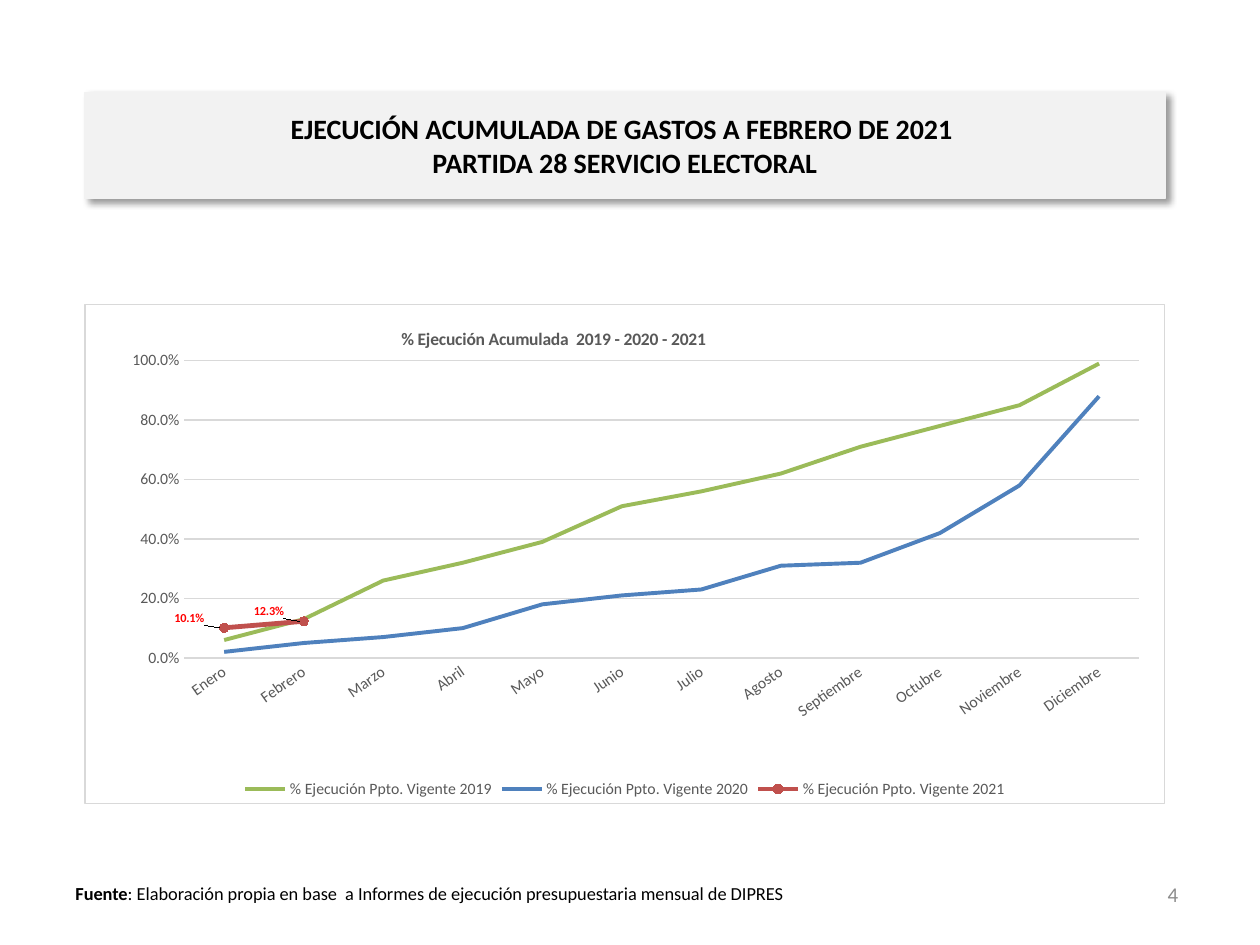
from dataclasses import dataclass
from typing import Optional

from lxml.etree import SubElement
from pptx import Presentation
from pptx.chart.data import CategoryChartData
from pptx.dml.color import RGBColor
from pptx.enum.chart import XL_CHART_TYPE, XL_LABEL_POSITION, XL_LEGEND_POSITION, XL_MARKER_STYLE, XL_TICK_MARK
from pptx.enum.text import MSO_ANCHOR, MSO_AUTO_SIZE, PP_ALIGN
from pptx.oxml import parse_xml
from pptx.oxml.ns import nsdecls, qn
from pptx.util import Pt


@dataclass(frozen=True)
class Theme:
    font: str = "Calibri"
    black: str = "000000"
    gray: str = "595959"
    number: str = "8C8C8C"
    rule: str = "D9D9D9"
    banner: str = "F2F2F2"
    white: str = "FFFFFF"
    alert: str = "FF0000"
    heading_size: float = 16
    number_size: float = 12
    source_size: float = 10.5
    chart_title_size: float = 10
    axis_size: float = 9
    label_size: float = 7


@dataclass(frozen=True)
class Frame:
    left: float
    top: float
    width: float
    height: float

    def lengths(self) -> tuple:
        return Pt(self.left), Pt(self.top), Pt(self.width), Pt(self.height)


@dataclass(frozen=True)
class YearLine:
    year: int
    color: str
    weight: float
    values: tuple
    marked: bool = False


THEME = Theme()
PERCENT = "0.0%"
MONTHS = ("Enero", "Febrero", "Marzo", "Abril", "Mayo", "Junio", "Julio", "Agosto",
          "Septiembre", "Octubre", "Noviembre", "Diciembre")
YEAR_LINES = (
    YearLine(2019, "9BBB59", 2.25, (0.06, 0.13, 0.26, 0.32, 0.39, 0.51, 0.56, 0.62, 0.71, 0.78, 0.85, 0.99)),
    YearLine(2020, "4F81BD", 2.25, (0.02, 0.05, 0.07, 0.1, 0.18, 0.21, 0.23, 0.31, 0.32, 0.42, 0.58, 0.88)),
    YearLine(2021, "C0504D", 2.75, (0.101, 0.123), True),
)
LABEL_SHIFTS = ((-0.01, -0.02), (-0.01, -0.02))


def set_font(font, size: float, color: str, bold: Optional[bool] = None) -> None:
    font.name = THEME.font
    font.size = Pt(size)
    font.bold = bold
    font.color.rgb = RGBColor.from_string(color)


def set_line(line, color: str, weight: float) -> None:
    line.color.rgb = RGBColor.from_string(color)
    line.width = Pt(weight)


def set_layout(parent, index: int, **settings) -> None:
    for old in parent.findall(qn("c:layout")):
        parent.remove(old)
    layout = parse_xml(f"<c:layout {nsdecls('c')}><c:manualLayout/></c:layout>")
    for name, value in settings.items():
        SubElement(layout[0], qn(f"c:{name}")).set("val", str(value))
    parent.insert(index, layout)


def add_heading(page) -> None:
    box = page.shapes.title
    box.left, box.top, box.width, box.height = Frame(48.24, 59.76, 617.76, 46.8).lengths()
    box.fill.solid()
    box.fill.fore_color.rgb = RGBColor.from_string(THEME.banner)
    set_line(box.line, THEME.banner, 0.75)
    box._element.spPr.append(parse_xml(
        f'<a:effectLst {nsdecls("a")}><a:outerShdw blurRad="50800" dist="38100" dir="2700000" '
        f'algn="tl" rotWithShape="0"><a:srgbClr val="{THEME.black}"><a:alpha val="40000"/>'
        '</a:srgbClr></a:outerShdw></a:effectLst>'))
    text = box.text_frame
    text.text = "EJECUCIÓN ACUMULADA DE GASTOS A FEBRERO DE 2021 \vPARTIDA 28 SERVICIO ELECTORAL"
    text.vertical_anchor = MSO_ANCHOR.MIDDLE
    text.auto_size = MSO_AUTO_SIZE.SHAPE_TO_FIT_TEXT
    para = text.paragraphs[0]
    para.alignment = PP_ALIGN.CENTER
    set_font(para.font, THEME.heading_size, THEME.black, True)


def add_text(page, frame: Frame, parts: tuple, size: float, color: str,
             alignment: PP_ALIGN, anchor: MSO_ANCHOR) -> None:
    text = page.shapes.add_textbox(*frame.lengths()).text_frame
    text.word_wrap = True
    text.vertical_anchor = anchor
    para = text.paragraphs[0]
    para.alignment = alignment
    set_font(para.font, size, color)
    for wording, bold in parts:
        span = para.add_run()
        span.text = wording
        span.font.bold = bold


def style_axes(chart) -> None:
    months, shares = chart.category_axis, chart.value_axis
    for axis in (months, shares):
        axis.major_tick_mark = axis.minor_tick_mark = XL_TICK_MARK.NONE
        set_font(axis.tick_labels.font, THEME.axis_size, THEME.gray)
    set_line(months.format.line, THEME.rule, 1)
    months._element.find(qn("c:txPr")).find(qn("a:bodyPr")).set("rot", "-2100000")
    shares.format.line.fill.background()
    shares.minimum_scale, shares.maximum_scale, shares.major_unit = 0, 1, 0.2
    shares.tick_labels.number_format = PERCENT
    shares.tick_labels.number_format_is_linked = False
    set_line(shares.major_gridlines.format.line, THEME.rule, 0.75)


def style_series(series, year_line: YearLine) -> None:
    series.smooth = False
    set_line(series.format.line, year_line.color, year_line.weight)
    if not year_line.marked:
        series.marker.style = XL_MARKER_STYLE.NONE
        return
    series.marker.style = XL_MARKER_STYLE.CIRCLE
    series.marker.size = 5
    series.marker.format.fill.solid()
    series.marker.format.fill.fore_color.rgb = RGBColor.from_string(year_line.color)
    set_line(series.marker.format.line, year_line.color, 0.75)
    labels = series.data_labels
    labels.show_value = True
    labels.number_format = PERCENT
    labels.number_format_is_linked = False
    set_font(labels.font, THEME.label_size, THEME.alert, True)
    for index, (across, down) in enumerate(LABEL_SHIFTS):
        label = series.points[index].data_label
        set_font(label.font, THEME.label_size, THEME.alert, True)
        label.position = XL_LABEL_POSITION.LEFT
        set_layout(labels._element.findall(qn("c:dLbl"))[index], 1, x=across, y=down)


def add_spending_chart(page) -> None:
    data = CategoryChartData(number_format=PERCENT)
    data.categories = MONTHS
    for year_line in YEAR_LINES:
        data.add_series(f"% Ejecución Ppto. Vigente {year_line.year}", year_line.values)
    chart = page.shapes.add_chart(XL_CHART_TYPE.LINE_MARKERS,
                                  *Frame(48.24, 173.52, 617.76, 285.84).lengths(), data).chart
    set_font(chart.font, THEME.chart_title_size, THEME.black)
    chart.has_title = True
    para = chart.chart_title.text_frame.paragraphs[0]
    para.text = "% Ejecución Acumulada  2019 - 2020 - 2021"
    set_font(para.font, THEME.chart_title_size, THEME.gray, True)
    chart.chart_title.include_in_layout = False
    set_layout(chart.chart_title._element, 1, xMode="edge", yMode="edge", x=0.29, y=0.04)
    chart.has_legend = True
    chart.legend.position = XL_LEGEND_POSITION.BOTTOM
    chart.legend.include_in_layout = False
    set_font(chart.legend.font, THEME.axis_size, THEME.gray)
    style_axes(chart)
    plot = chart.plots[0]
    plot.vary_by_categories = False
    for series, year_line in zip(plot.series, YEAR_LINES):
        style_series(series, year_line)
    space = chart._chartSpace
    set_layout(space.chart.plotArea, 0, layoutTarget="inner", xMode="edge", yMode="edge",
               x=0.092, y=0.113, w=0.884, h=0.596)
    space.chart.addnext(parse_xml(
        f'<c:spPr {nsdecls("c", "a")}><a:solidFill><a:srgbClr val="{THEME.white}"/></a:solidFill>'
        f'<a:ln w="9525"><a:solidFill><a:srgbClr val="{THEME.rule}"/></a:solidFill></a:ln></c:spPr>'))


def main() -> None:
    deck = Presentation()
    deck.slide_width, deck.slide_height = Pt(720), Pt(540)
    page = deck.slides.add_slide(deck.slide_layouts[5])
    add_heading(page)
    add_spending_chart(page)
    add_text(page, Frame(36, 500.4, 425.52, 20.16),
             (("Fuente", True),
              (": Elaboración propia en base  a Informes de ejecución presupuestaria mensual de DIPRES", False)),
             THEME.source_size, THEME.black, PP_ALIGN.LEFT, MSO_ANCHOR.TOP)
    add_text(page, Frame(512.64, 496.8, 167.76, 28.8), (("4", None),),
             THEME.number_size, THEME.number, PP_ALIGN.RIGHT, MSO_ANCHOR.MIDDLE)
    deck.save("out.pptx")


if __name__ == "__main__":
    main()
